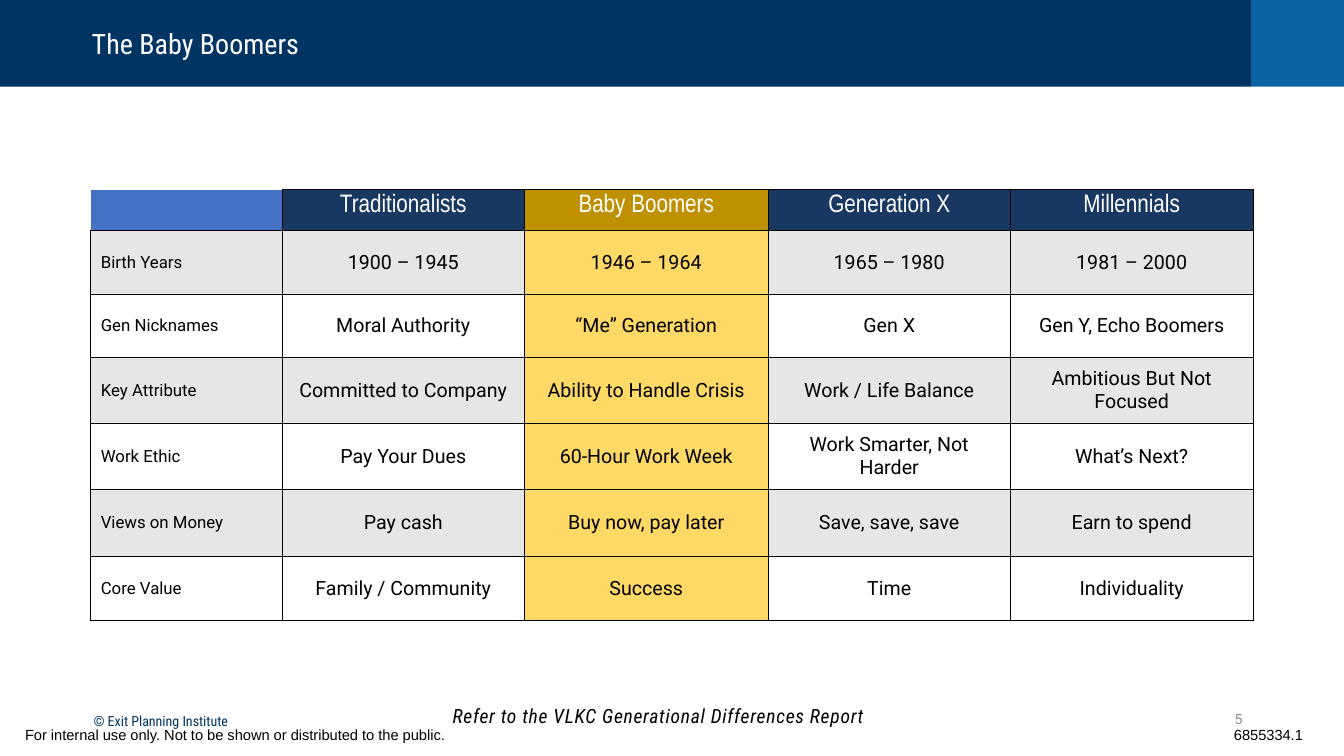
import pptx
import pptx.dml.color
import pptx.enum.shapes
import pptx.enum.text
import pptx.oxml
import pptx.oxml.ns
import pptx.util

RGB = pptx.dml.color.RGBColor
ALIGN = pptx.enum.text.PP_ALIGN
ANCHOR = pptx.enum.text.MSO_ANCHOR
SCALE = 9144

NAVY = RGB(0x00, 0x34, 0x62)
BLUE = RGB(0x0D, 0x64, 0xA3)
HEAD = RGB(0x18, 0x37, 0x61)
CORNER = RGB(0x44, 0x72, 0xC4)
GOLD = RGB(0xBF, 0x90, 0x00)
YELLOW = RGB(0xFF, 0xD9, 0x66)
GREY = RGB(0x88, 0x88, 0x88)
BAND = RGB(0xE6, 0xE6, 0xE6)
WHITE = RGB(0xFF, 0xFF, 0xFF)
BLACK = RGB(0x00, 0x00, 0x00)

COLS = [190, 240, 242, 240, 241]
ROWS = [41, 63, 63, 65, 66, 66, 64]
BOOM = 2
DATA = [
    ["", "Traditionalists", "Baby Boomers", "Generation X", "Millennials"],
    ["Birth Years", "1900 – 1945", "1946 – 1964", "1965 – 1980", "1981 – 2000"],
    ["Gen Nicknames", "Moral Authority", "“Me” Generation", "Gen X",
     "Gen Y, Echo Boomers"],
    ["Key Attribute", "Committed to Company", "Ability to Handle Crisis",
     "Work / Life Balance", "Ambitious But Not Focused"],
    ["Work Ethic", "Pay Your Dues", "60-Hour Work Week",
     "Work Smarter, Not Harder", "What’s Next?"],
    ["Views on Money", "Pay cash", "Buy now, pay later", "Save, save, save",
     "Earn to spend"],
    ["Core Value", "Family / Community", "Success", "Time", "Individuality"],
]


def px(n):
    """Turn px into EMU."""
    return pptx.util.Emu(n * SCALE)


def style(para, size, face, color, align=ALIGN.LEFT):
    """Format a paragraph and its runs."""
    para.alignment = align
    for run in para.runs:
        run.font.size = pptx.util.Pt(size)
        run.font.name = face
        run.font.color.rgb = color


def bar(slide, box, color):
    """Draw a plain filled bar."""
    shape = slide.shapes.add_shape(
        pptx.enum.shapes.MSO_SHAPE.RECTANGLE, *map(px, box))
    shape.shadow.inherit = False
    shape.fill.solid()
    shape.fill.fore_color.rgb = color
    shape.line.fill.background()


def label(slide, box, text, size, face, color, align=ALIGN.LEFT):
    """Place a wrapped line of text and return its paragraph."""
    frame = slide.shapes.add_textbox(*map(px, box)).text_frame
    frame.word_wrap = True
    frame.text = text
    para = frame.paragraphs[0]
    style(para, size, face, color, align)
    return para


def header(slide, box):
    """Draw the top band and the title in it."""
    x, y, w, h = box
    side = 92
    bar(slide, (x, y, w - side, h), NAVY)
    bar(slide, (x + w - side, y, side, h), BLUE)
    title = slide.shapes.title
    title.left, title.top, title.width, title.height = map(
        px, (x + 81, y + 25, 690, 36))
    frame = title.text_frame
    frame.text = "The Baby Boomers"
    frame.auto_size = pptx.enum.text.MSO_AUTO_SIZE.NONE
    frame.vertical_anchor = ANCHOR.TOP
    frame.paragraphs[0].line_spacing = 0.9
    style(frame.paragraphs[0], 20, "Roboto Condensed", WHITE)
    slide.shapes._spTree.append(title._element)


def edge(cell, sides):
    """Rule the given sides of a cell in black."""
    props = cell._tc.get_or_add_tcPr()
    for i, side in enumerate(sides):
        props.insert(i, pptx.oxml.parse_xml(
            f'<a:ln{side} {pptx.oxml.ns.nsdecls("a")} w="12700"><a:solidFill>'
            f'<a:srgbClr val="{BLACK}"/></a:solidFill></a:ln{side}>'))


def shade(row, col):
    """Choose the fill of a cell."""
    if row == 0:
        return CORNER if col == 0 else GOLD if col == BOOM else HEAD
    if col == BOOM:
        return YELLOW
    return BAND if row % 2 else WHITE


def grid(slide, box):
    """Build the table of generations."""
    table = slide.shapes.add_table(
        len(ROWS), len(COLS), *map(px, box)).table
    table.first_row = table.horz_banding = False
    for col, width in zip(table.columns, COLS):
        col.width = px(width)
    for r, words in enumerate(DATA):
        table.rows[r].height = px(ROWS[r])
        for c, word in enumerate(words):
            cell = table.cell(r, c)
            cell.text = word
            cell.fill.solid()
            cell.fill.fore_color.rgb = shade(r, c)
            cell.vertical_anchor = ANCHOR.MIDDLE if r else ANCHOR.TOP
            edge(cell, "LRTB" if r or c else "RB")
            para = cell.text_frame.paragraphs[0]
            if r == 0:
                style(para, 18, "Arial Narrow", WHITE, ALIGN.CENTER)
            elif c == 0:
                style(para, 12, "Roboto", BLACK)
            else:
                style(para, 14, "Roboto", BLACK, ALIGN.CENTER)


def footer(slide, box):
    """Place the note, the credit, the page number and the notice."""
    x, y, w, h = box
    label(slide, (x + 83, y + 9, 295, 48), "© Exit Planning Institute",
          10, "Roboto Condensed", NAVY)
    label(slide, (x + 942, y + 7, 300, 30), "5", 10, "Roboto", GREY,
          ALIGN.RIGHT)
    note = label(slide, (x + 439, y, 455, h),
                 "Refer to the VLKC Generational Differences Report",
                 14, "Roboto Condensed", BLACK)
    note.runs[0].font.italic = True
    note.runs[0]._r.get_or_add_rPr().set("spc", "50")
    notice = label(
        slide, (x + 15, y + 22, w - 30, 29),
        "For internal use only. Not to be shown or distributed to the public."
        "\t6855334.1", 10.5, "Arial", BLACK)
    notice._p.get_or_add_pPr().append(pptx.oxml.parse_xml(
        f'<a:tabLst {pptx.oxml.ns.nsdecls("a")}>'
        f'<a:tab pos="{px(1199)}" algn="l"/></a:tabLst>'))


def main():
    """Build and save the slide."""
    deck = pptx.Presentation()
    deck.slide_width, deck.slide_height = px(1333), px(750)
    slide = deck.slides.add_slide(deck.slide_layouts[5])
    header(slide, (0, 0, 1333, 86))
    grid(slide, (90, 188, sum(COLS), sum(ROWS)))
    footer(slide, (0, 693, 1333, 57))
    deck.save("out.pptx")


if __name__ == "__main__":
    main()
